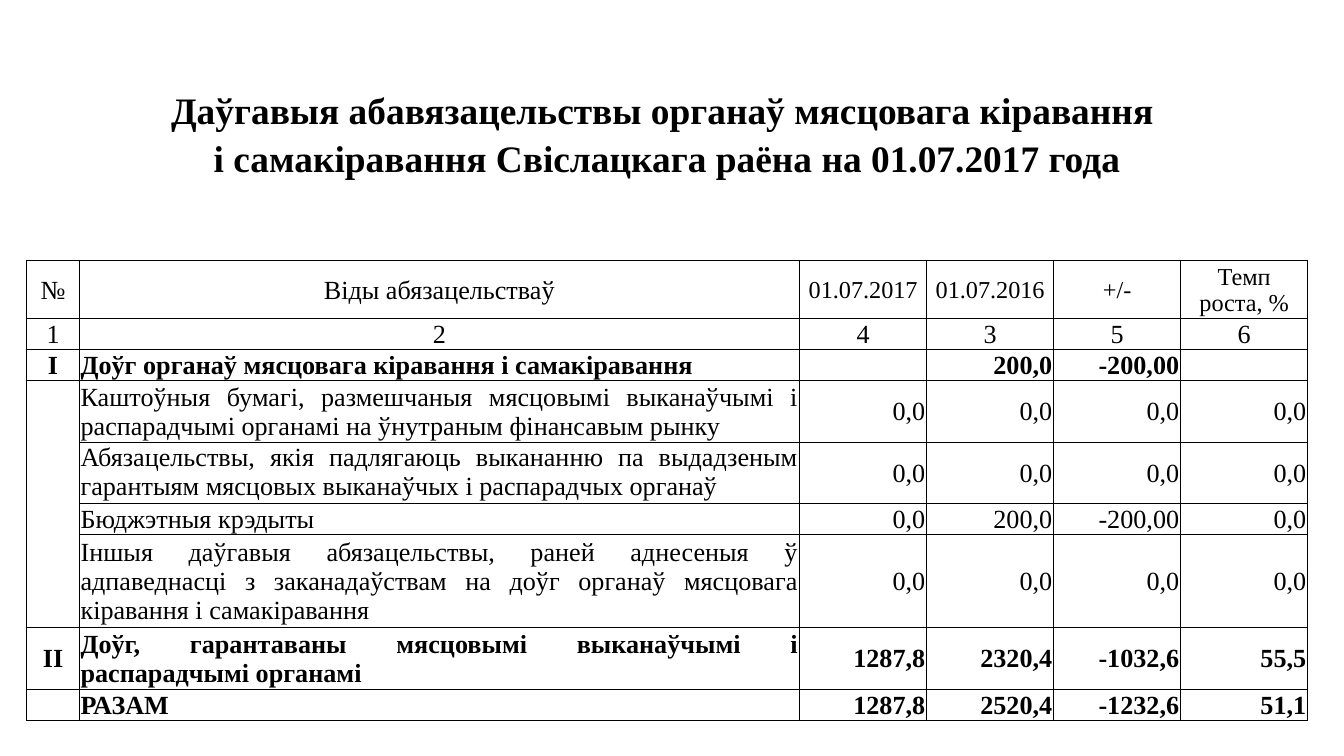
from dataclasses import dataclass

from lxml import etree
from pptx import Presentation
from pptx.dml.color import RGBColor
from pptx.enum.text import MSO_ANCHOR, PP_ALIGN
from pptx.oxml.ns import qn
from pptx.table import Table, _Cell
from pptx.util import Inches, Pt

CENTER, RIGHT, JUSTIFY, LEFT = PP_ALIGN.CENTER, PP_ALIGN.RIGHT, PP_ALIGN.JUSTIFY, PP_ALIGN.LEFT
TOP, MIDDLE, BOTTOM = MSO_ANCHOR.TOP, MSO_ANCHOR.MIDDLE, MSO_ANCHOR.BOTTOM
COLORS = {"ink": "000000", "paper": "FFFFFF"}
FONT = "Times New Roman"
TABLE_WIDTH = 9.53
LABEL_WIDTH, NAME_WIDTH = 0.39, 5.36
VALUE_WIDTH = (TABLE_WIDTH - LABEL_WIDTH - NAME_WIDTH) / 4
COLUMN_WIDTHS = [LABEL_WIDTH, NAME_WIDTH] + [VALUE_WIDTH] * 4
BODY_ALIGNS = [CENTER, JUSTIFY] + [RIGHT] * 4
HEADER_SIZES = [14, 14] + [13] * 4
TITLE = (
    "Даўгавыя абавязацельствы органаў мясцовага кіравання \n"
    "і самакіравання Свіслацкага раёна на 01.07.2017 года"
)
BANNER_ROWS = [(0.38, ""), (0.75, TITLE), (0.38, ""), (0.22, "")]


@dataclass
class DebtRow:
    """One ruled row of the debt table."""

    height: float
    label: str
    name: str
    values: list[str]
    bold: bool = False
    name_anchor: MSO_ANCHOR = MIDDLE
    name_align: PP_ALIGN = JUSTIFY


ZEROS = ["0,0"] * 4
HEADER = DebtRow(0.43, "№", "Віды абязацельстваў", ["01.07.2017", "01.07.2016", "+/-", "Темп\nроста, %"])
NUMBERS = DebtRow(0.23, "1", "2", ["4", "3", "5", "6"])
DEBTS = [
    DebtRow(0.23, "I", "Доўг органаў мясцовага кіравання і самакіравання", ["", "200,0", "-200,00", ""], bold=True),
    DebtRow(0.46, "", "Каштоўныя бумагі, размешчаныя мясцовымі выканаўчымі і распарадчымі органамі "
            "на ўнутраным фінансавым рынку", ZEROS),
    DebtRow(0.46, "", "Абязацельствы, якія падлягаюць выкананню па выдадзеным гарантыям мясцовых "
            "выканаўчых і распарадчых органаў", ZEROS, name_anchor=TOP),
    DebtRow(0.23, "", "Бюджэтныя крэдыты", ["0,0", "200,0", "-200,00", "0,0"]),
    DebtRow(0.69, "", "Іншыя даўгавыя абязацельствы, раней аднесеныя ў адпаведнасці з заканадаўствам "
            "на доўг органаў мясцовага кіравання і самакіравання", ZEROS),
    DebtRow(0.46, "II", "Доўг, гарантаваны мясцовымі выканаўчымі і распарадчымі органамі",
            ["1287,8", "2320,4", "-1032,6", "55,5"], bold=True),
    DebtRow(0.23, "", "РАЗАМ", ["1287,8", "2520,4", "-1232,6", "51,1"], bold=True, name_align=LEFT),
]
DEBT_ROWS = [HEADER, NUMBERS, *DEBTS]
FIRST_DEBT_ROW = len(BANNER_ROWS)


def set_borders(cell: _Cell, sides: str) -> None:
    """Rule the given sides of a cell and clear the others."""
    properties = cell._tc.get_or_add_tcPr()
    for side in "LRTB":
        line = etree.SubElement(properties, qn(f"a:ln{side}"), w=str(Pt(0.5)))
        if side in sides:
            fill = etree.SubElement(line, qn("a:solidFill"))
            etree.SubElement(fill, qn("a:srgbClr"), val=COLORS["ink"])
        else:
            etree.SubElement(line, qn("a:noFill"))


def fill_cell(cell: _Cell, text: str, size: float, bold: bool, align: PP_ALIGN,
              anchor: MSO_ANCHOR, sides: str, spacing: float = 1.0) -> None:
    """Write and format one table cell."""
    set_borders(cell, sides)
    cell.fill.solid()
    cell.fill.fore_color.rgb = RGBColor.from_string(COLORS["paper"])
    cell.margin_left = cell.margin_right = cell.margin_top = Inches(0.01)
    cell.margin_bottom = Inches(0)
    cell.vertical_anchor = anchor
    cell.text_frame.text = text
    for para in cell.text_frame.paragraphs:
        para.alignment = align
        para.line_spacing = spacing
        for span in para.runs:
            span.font.name = FONT
            span.font.size = Pt(size)
            span.font.bold = bold
            span.font.color.rgb = RGBColor.from_string(COLORS["ink"])
        if not para.runs:
            etree.SubElement(para._p, qn("a:endParaRPr"), sz="1000")


def draw_banner(table: Table) -> None:
    """Write the title and the spacing rows that span the table."""
    for index, (height, text) in enumerate(BANNER_ROWS):
        table.rows[index].height = Inches(height)
        sides = "B" if index == FIRST_DEBT_ROW - 1 else ""
        for column in range(len(COLUMN_WIDTHS)):
            fill_cell(table.cell(index, column), text if column == 0 else "",
                      20, True, CENTER, BOTTOM, sides, 1.15)
        table.cell(index, 0).merge(table.cell(index, len(COLUMN_WIDTHS) - 1))


def is_detail(index: int) -> bool:
    """Tell whether a debt row is an unlabelled detail row."""
    return 0 <= index < len(DEBT_ROWS) and not DEBT_ROWS[index].label and not DEBT_ROWS[index].bold


def label_sides(index: int) -> str:
    """Return the ruled sides of a label cell, open between detail rows."""
    top = "" if is_detail(index) and is_detail(index - 1) else "T"
    bottom = "" if is_detail(index) and is_detail(index + 1) else "B"
    return "LR" + top + bottom


def draw_debts(table: Table) -> None:
    """Write the ruled rows of the debt table."""
    for index, row in enumerate(DEBT_ROWS):
        table.rows[FIRST_DEBT_ROW + index].height = Inches(row.height)
        for column, text in enumerate([row.label, row.name, *row.values]):
            align = row.name_align if column == 1 else BODY_ALIGNS[column]
            anchor = row.name_anchor if column == 1 else MIDDLE
            if row in (HEADER, NUMBERS):
                align = CENTER
            if row is NUMBERS:
                anchor = BOTTOM
            size = HEADER_SIZES[column] if row is HEADER else 14
            sides = label_sides(index) if column == 0 else "LRTB"
            fill_cell(table.cell(FIRST_DEBT_ROW + index, column), text, size, row.bold, align, anchor, sides)


def main() -> None:
    """Build the debt slide."""
    deck = Presentation()
    deck.slide_width = Inches(10)
    deck.slide_height = deck.slide_width * 9 // 16
    page = deck.slides.add_slide(deck.slide_layouts[6])
    row_count = FIRST_DEBT_ROW + len(DEBT_ROWS)
    frame = page.shapes.add_table(row_count, len(COLUMN_WIDTHS), Inches(0.2), Inches(0.21),
                                  Inches(TABLE_WIDTH), Inches(5.33))
    table = frame.table
    table.first_row = table.horz_banding = False
    for column, width in zip(table.columns, COLUMN_WIDTHS):
        column.width = Inches(width)
    draw_banner(table)
    draw_debts(table)
    deck.save("out.pptx")


if __name__ == "__main__":
    main()
